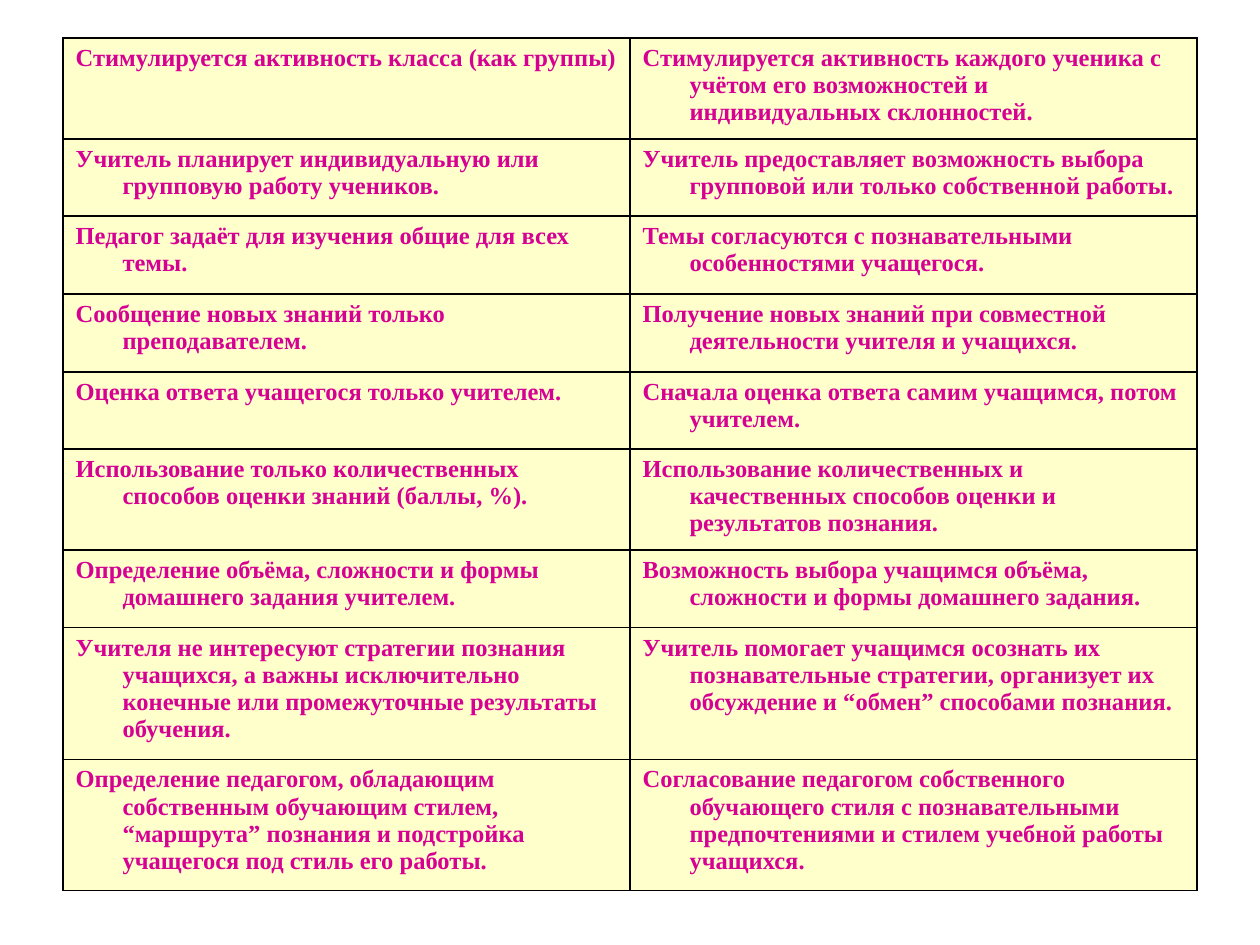
from lxml.etree import SubElement
from pptx import Presentation
from pptx.dml.color import RGBColor
from pptx.oxml.ns import qn
from pptx.util import Pt

# Content: left cell, right cell
ROWS = [
    ("Стимулируется активность класса (как группы)",
     "Стимулируется активность каждого ученика с учётом его возможностей и индивидуальных склонностей."),
    ("Учитель планирует индивидуальную или групповую работу учеников.",
     "Учитель предоставляет возможность выбора групповой или только собственной работы."),
    ("Педагог задаёт для изучения общие для всех темы.",
     "Темы согласуются с познавательными особенностями учащегося."),
    ("Сообщение новых знаний только преподавателем.",
     "Получение новых знаний при совместной деятельности учителя и учащихся."),
    ("Оценка ответа учащегося только учителем.",
     "Сначала оценка ответа самим учащимся, потом учителем."),
    ("Использование только количественных способов оценки знаний (баллы, %).",
     "Использование количественных и качественных способов оценки и результатов познания."),
    ("Определение объёма, сложности и формы домашнего задания учителем.",
     "Возможность выбора учащимся объёма, сложности и формы домашнего задания."),
    ("Учителя не интересуют стратегии познания учащихся, а важны исключительно "
     "конечные или промежуточные результаты обучения.",
     "Учитель помогает учащимся осознать их познавательные стратегии, организует их "
     "обсуждение и “обмен” способами познания."),
    ("Определение педагогом, обладающим собственным обучающим стилем, “маршрута” "
     "познания и подстройка учащегося под стиль его работы.",
     "Согласование педагогом собственного обучающего стиля с познавательными "
     "предпочтениями и стилем учебной работы учащихся."),
]
ROW_HEIGHTS = [101, 77, 78, 78, 77, 101, 78, 132, 131]
COLORS = {"text": "D60093", "cell": "FFFFCC", "border": "000000"}
FONT = "Times New Roman"
LEFT, TOP, COLUMN_WIDTH, INDENT = 63, 38, 567, 47


def px(length):
    return round(length * 914400 / 126)


def add_borders(cell):
    properties = cell._tc.get_or_add_tcPr()
    for side in ("a:lnL", "a:lnR", "a:lnT", "a:lnB"):
        line = SubElement(properties, qn(side), w=str(Pt(0.75)))
        fill = SubElement(line, qn("a:solidFill"))
        SubElement(fill, qn("a:srgbClr"), val=COLORS["border"])


def fill_cell(cell, text):
    add_borders(cell)
    cell.fill.solid()
    cell.fill.fore_color.rgb = RGBColor.from_string(COLORS["cell"])
    paragraph = cell.text_frame.paragraphs[0]
    # Hanging indent: every line but the first is moved in
    paragraph_properties = paragraph._p.get_or_add_pPr()
    paragraph_properties.set("marL", str(px(INDENT)))
    paragraph_properties.set("indent", str(-px(INDENT)))
    run = paragraph.add_run()
    run.text = text
    run.font.name = FONT
    run.font.size = Pt(14)
    run.font.bold = True
    run.font.color.rgb = RGBColor.from_string(COLORS["text"])


def main():
    presentation = Presentation()
    presentation.slide_width, presentation.slide_height = px(1260), px(945)
    slide = presentation.slides.add_slide(presentation.slide_layouts[6])

    # Table
    table = slide.shapes.add_table(
        len(ROWS), 2, px(LEFT), px(TOP), px(2 * COLUMN_WIDTH), px(sum(ROW_HEIGHTS))).table
    table.first_row = table.horz_banding = False
    for column in table.columns:
        column.width = px(COLUMN_WIDTH)
    for row, height, texts in zip(table.rows, ROW_HEIGHTS, ROWS):
        row.height = px(height)
        for cell, text in zip(row.cells, texts):
            fill_cell(cell, text)

    presentation.save("out.pptx")


if __name__ == "__main__":
    main()
